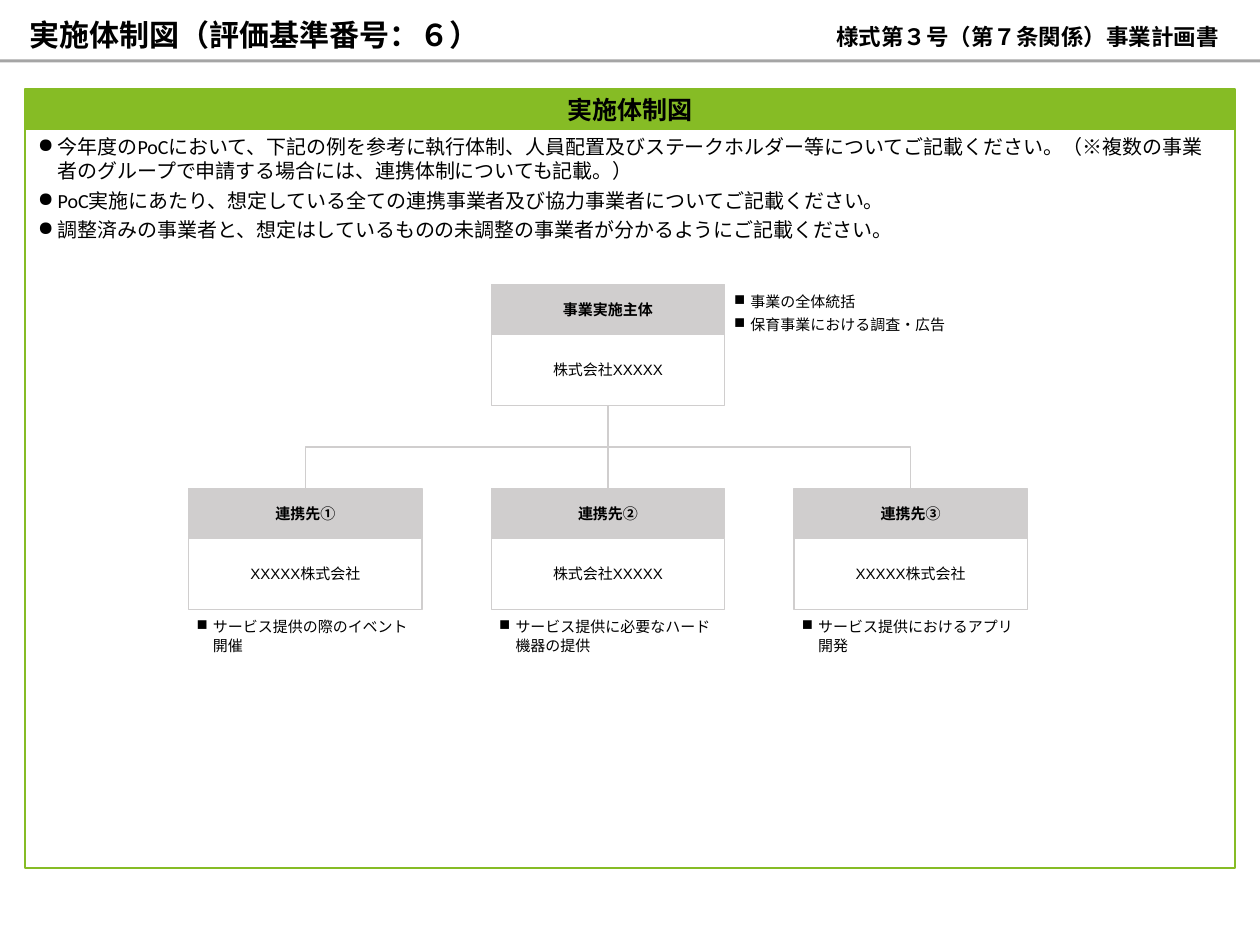
"""Build the project organisation chart slide of the business plan form."""
import dataclasses

import lxml.etree
import pptx
import pptx.dml.color
import pptx.enum.shapes
import pptx.enum.text
import pptx.oxml.ns
import pptx.util

Cm, Pt = pptx.util.Cm, pptx.util.Pt
qn = pptx.oxml.ns.qn
RGB = pptx.dml.color.RGBColor.from_string
ALIGN = pptx.enum.text.PP_ALIGN
ANCHOR = pptx.enum.text.MSO_ANCHOR
CONNECTOR = pptx.enum.shapes.MSO_CONNECTOR


@dataclasses.dataclass(frozen=True)
class Theme:
    ink: str = "000000"
    paper: str = "FFFFFF"
    green: str = "86BC25"
    rule: str = "A5A5A5"
    grey: str = "D0CECE"
    title: int = 24
    heading: int = 20
    form: int = 18
    body: int = 16
    small: int = 12
    latin: str = "Calibri"
    label: str = "Arial"
    japanese: str = "Noto Sans CJK JP"


theme = Theme()
deck = pptx.Presentation()
deck.slide_width, deck.slide_height = Cm(35.56), Cm(26.67)
slide = deck.slides.add_slide(deck.slide_layouts[6])


def write(text, *, at, size, font=theme.latin, bold=False, align=ALIGN.LEFT,
          anchor=ANCHOR.TOP, inset=(0.2, 0.2), wrap=True, fill=None, line=None,
          weight=1, bullet=None, indent=(0, 0), before=0, spacing=None):
    place = [Cm(length) for length in at]
    if fill:
        box = slide.shapes.add_shape(pptx.enum.shapes.MSO_SHAPE.RECTANGLE, *place)
        box.shadow.inherit = False
        box.fill.solid()
        box.fill.fore_color.rgb = RGB(fill)
        if line:
            box.line.color.rgb = RGB(line)
            box.line.width = Pt(weight)
        else:
            box.line.fill.background()
    else:
        box = slide.shapes.add_textbox(*place)
    frame = box.text_frame
    frame.word_wrap = wrap
    frame.vertical_anchor = anchor
    frame.margin_left = frame.margin_right = Cm(inset[0])
    frame.margin_top = frame.margin_bottom = Cm(inset[1])
    for number, wording in enumerate(text.split("\n") if text else []):
        paragraph = frame.add_paragraph() if number else frame.paragraphs[0]
        paragraph.alignment = align
        if bullet:
            properties = paragraph._p.get_or_add_pPr()
            properties.set("marL", str(Cm(indent[0])))
            properties.set("indent", str(Cm(indent[1])))
            lxml.etree.SubElement(properties, qn("a:buChar")).set("char", bullet)
        if number and before:
            paragraph.space_before = Pt(before)
        if spacing:
            paragraph.line_spacing = spacing
        run = paragraph.add_run()
        run.text = wording
        run.font.size = Pt(size)
        run.font.bold = bold
        run.font.name = font
        run.font.color.rgb = RGB(theme.ink)
        lxml.etree.SubElement(run._r.rPr, qn("a:ea")).set("typeface", font)


def connect(kind, start, end, rotation=0):
    link = slide.shapes.add_connector(kind, *[Cm(length) for length in start + end])
    link.line.color.rgb = RGB(theme.grey)
    link.line.width = Pt(1)
    properties = link._element.spPr
    lxml.etree.SubElement(properties, qn("a:effectLst"))
    properties.find(qn("a:xfrm")).set("rot", str(rotation * 60000))


write("実施体制図（評価基準番号：６）", at=(0.84, 0.53, 17.45, 0.94), size=theme.title,
      bold=True, anchor=ANCHOR.BOTTOM, inset=(0, 0))
write("", at=(0, 1.68, 35.56, 0.08), size=theme.small, fill=theme.rule)
write("様式第３号（第７条関係）事業計画書", at=(23.14, 0.79, 11.71, 0.61), size=theme.form,
      font=theme.japanese, bold=True, align=ALIGN.CENTER, anchor=ANCHOR.BOTTOM, inset=(0, 0))

panel = dict(inset=(0.36, 0.18), line=theme.green, weight=1.5)
write("実施体制図", at=(0.71, 2.51, 34.14, 1.17), size=theme.heading, bold=True,
      align=ALIGN.CENTER, anchor=ANCHOR.MIDDLE, wrap=False, fill=theme.green, **panel)
write("今年度のPoCにおいて、下記の例を参考に執行体制、人員配置及びステークホルダー等についてご記載ください。"
      "（※複数の事業者のグループで申請する場合には、連携体制についても記載。）\n"
      "PoC実施にあたり、想定している全ての連携事業者及び協力事業者についてご記載ください。\n"
      "調整済みの事業者と、想定はしているものの未調整の事業者が分かるようにご記載ください。",
      at=(0.71, 3.63, 34.14, 20.88), size=theme.body, fill=theme.paper,
      bullet="●", indent=(0.56, -0.56), before=4.3, **panel)

middle, pitch, width = 17.16, 8.54, 6.58
head, body = 1.4, 2.01
lead_top, partner_top = 8.03, 13.79
lead_bottom = lead_top + head + body
drop = partner_top - lead_bottom
branch = lead_bottom + drop / 2

for side, rotation in ((-1, 90), (1, 270)):
    centre = middle + side * pitch / 2
    connect(CONNECTOR.ELBOW, (centre + side * drop / 2, branch - pitch / 2),
            (centre - side * drop / 2, branch + pitch / 2), rotation)
connect(CONNECTOR.STRAIGHT, (middle, partner_top), (middle, lead_bottom))

card = dict(size=theme.small, font=theme.label, align=ALIGN.CENTER,
            anchor=ANCHOR.MIDDLE, line=theme.grey)
duty = dict(size=theme.small, bullet="■", indent=(0.48, -0.46), before=3, spacing=1.06)
organisations = (
    (0, lead_top, "事業実施主体", "株式会社XXXXX"),
    (-1, partner_top, "連携先①", "XXXXX株式会社"),
    (0, partner_top, "連携先②", "株式会社XXXXX"),
    (1, partner_top, "連携先③", "XXXXX株式会社"),
)
for column, top, role, company in organisations:
    left = middle + column * pitch - width / 2
    write(role, at=(left, top, width, head), bold=True, fill=theme.grey, **card)
    write(company, at=(left, top + head, width, body), fill=theme.paper, **card)

write("事業の全体統括\n保育事業における調査・広告", at=(20.5, lead_top, width, 3.4), **duty)
partner_duties = ("サービス提供の際のイベント開催", "サービス提供に必要なハード機器の提供",
                  "サービス提供におけるアプリ開発")
for column, task in enumerate(partner_duties, start=-1):
    left = middle + column * pitch - width / 2
    write(task, at=(left, partner_top + head + body, width, 3.1), **duty)

deck.save("out.pptx")
